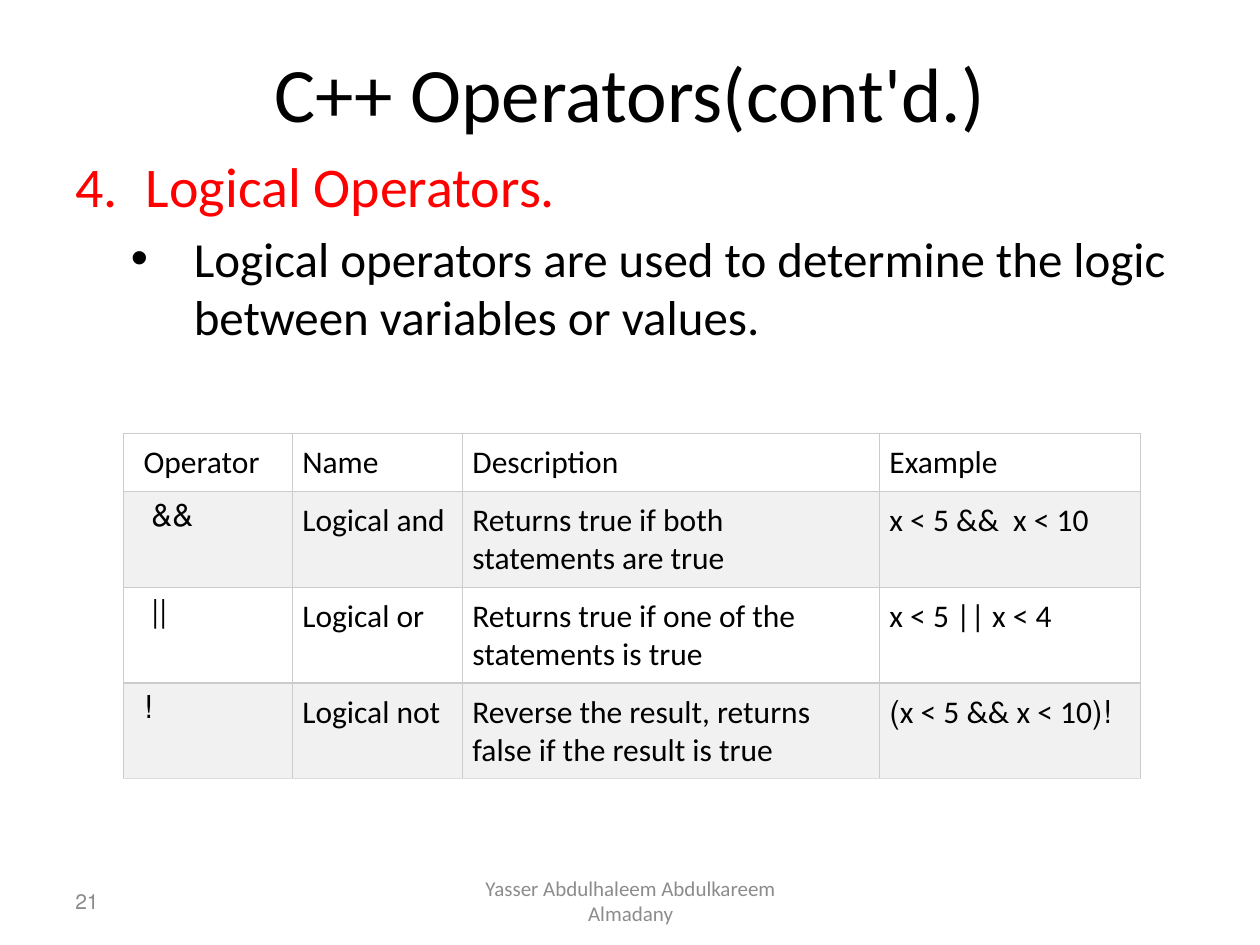
"""Build the slide on C++ logical operators."""
from lxml import etree
from pptx import Presentation, util as u
from pptx.dml.color import RGBColor
from pptx.enum import text as t
from pptx.oxml import ns

COLORS = {"black": "000000", "red": "FF0000", "gray": "8C8C8C", "white": "FFFFFF",
          "band": "F1F1F1", "border": "CCCCCC", "bottom": "DDDDDD"}


def write(paragraph, content, size, color="black", align="LEFT", rtl=False,
          level=0, margin=0, indent=0, bullet=None):
    paragraph.alignment = getattr(t.PP_ALIGN, align)
    paragraph.level = level
    properties = paragraph._p.get_or_add_pPr()
    if rtl:
        properties.set("rtl", "1")
    if bullet:
        tag, attributes = bullet
        properties.set("marL", str(u.Inches(margin)))
        properties.set("indent", str(u.Inches(indent)))
        paragraph.space_before = u.Pt(size * 0.2)
        etree.SubElement(properties, ns.qn("a:buFont"), typeface="Arial" if tag == "a:buChar" else "+mj-lt")
        etree.SubElement(properties, ns.qn(tag), attributes)
    run = paragraph.add_run()
    run.text = content
    run.font.name = "Calibri"
    run.font.size = u.Pt(size)
    run.font.color.rgb = RGBColor.from_string(COLORS[color])


def add_box(left, top, width, height, anchor="MIDDLE"):
    shape = slide.shapes.add_textbox(*map(u.Inches, (left, top, width, height)))
    shape.text_frame.word_wrap = True
    shape.text_frame.vertical_anchor = getattr(t.MSO_ANCHOR, anchor)
    return shape.text_frame


presentation = Presentation()
presentation.slide_width, presentation.slide_height = u.Inches(10), u.Inches(7.5)
slide = presentation.slides.add_slide(presentation.slide_layouts[6])

title = add_box(0.5, 0.3, 9, 0.85)
write(title.paragraphs[0], "C++ Operators(cont'd.)", 44, align="CENTER", rtl=True)

body = add_box(0.5, 1.15, 9, 5.75, anchor="TOP")
write(body.paragraphs[0], "Logical Operators.", 32, color="red", margin=0.56, indent=-0.56,
      bullet=("a:buAutoNum", {"type": "arabicPeriod", "startAt": "4"}))
write(body.add_paragraph(),
      "Logical operators are used to determine the logic between variables or values.",
      28, level=1, margin=0.94, indent=-0.5, bullet=("a:buChar", {"char": "•"}))

footer = add_box(3.42, 6.95, 3.17, 0.4)
write(footer.paragraphs[0], "Yasser Abdulhaleem Abdulkareem Almadany", 12,
      color="gray", align="CENTER", rtl=True)
number = add_box(0.5, 6.95, 2.33, 0.4)
write(number.paragraphs[0], "21", 12, color="gray", rtl=True)

rows = [
    ("Operator", "Name", "Description", "Example"),
    ("&& ", "Logical and", "Returns true if both statements are true", "x < 5 &&  x < 10"),
    ("|| ", "Logical or", "Returns true if one of the statements is true", "x < 5 || x < 4"),
    ("!", "Logical not", "Reverse the result, returns false if the result is true", "!(x < 5 && x < 10)"),
]
widths = [1.34, 1.35, 3.31, 2.07]
heights = [0.46, 0.76, 0.76, 0.76]
table = slide.shapes.add_table(len(rows), len(widths), u.Inches(0.98), u.Inches(3.44),
                               u.Inches(sum(widths)), u.Inches(sum(heights))).table
for column, width in zip(table.columns, widths):
    column.width = u.Inches(width)
for row_index, values in enumerate(rows):
    table.rows[row_index].height = u.Inches(heights[row_index])
    for column_index, value in enumerate(values):
        cell = table.cell(row_index, column_index)
        cell.margin_left = u.Inches(0.08 if column_index else 0.16)
        cell.margin_right = cell.margin_top = cell.margin_bottom = u.Inches(0.08)
        write(cell.text_frame.paragraphs[0], value, 18, rtl=True)
        for side in "LRTB":
            last = side == "B" and row_index == len(rows) - 1
            line = etree.SubElement(cell._tc.get_or_add_tcPr(), ns.qn(f"a:ln{side}"), w=str(u.Pt(0.75)))
            fill = etree.SubElement(line, ns.qn("a:solidFill"))
            etree.SubElement(fill, ns.qn("a:srgbClr"), val=COLORS["bottom" if last else "border"])
        cell.fill.solid()
        cell.fill.fore_color.rgb = RGBColor.from_string(COLORS["band" if row_index % 2 else "white"])

presentation.save("out.pptx")
